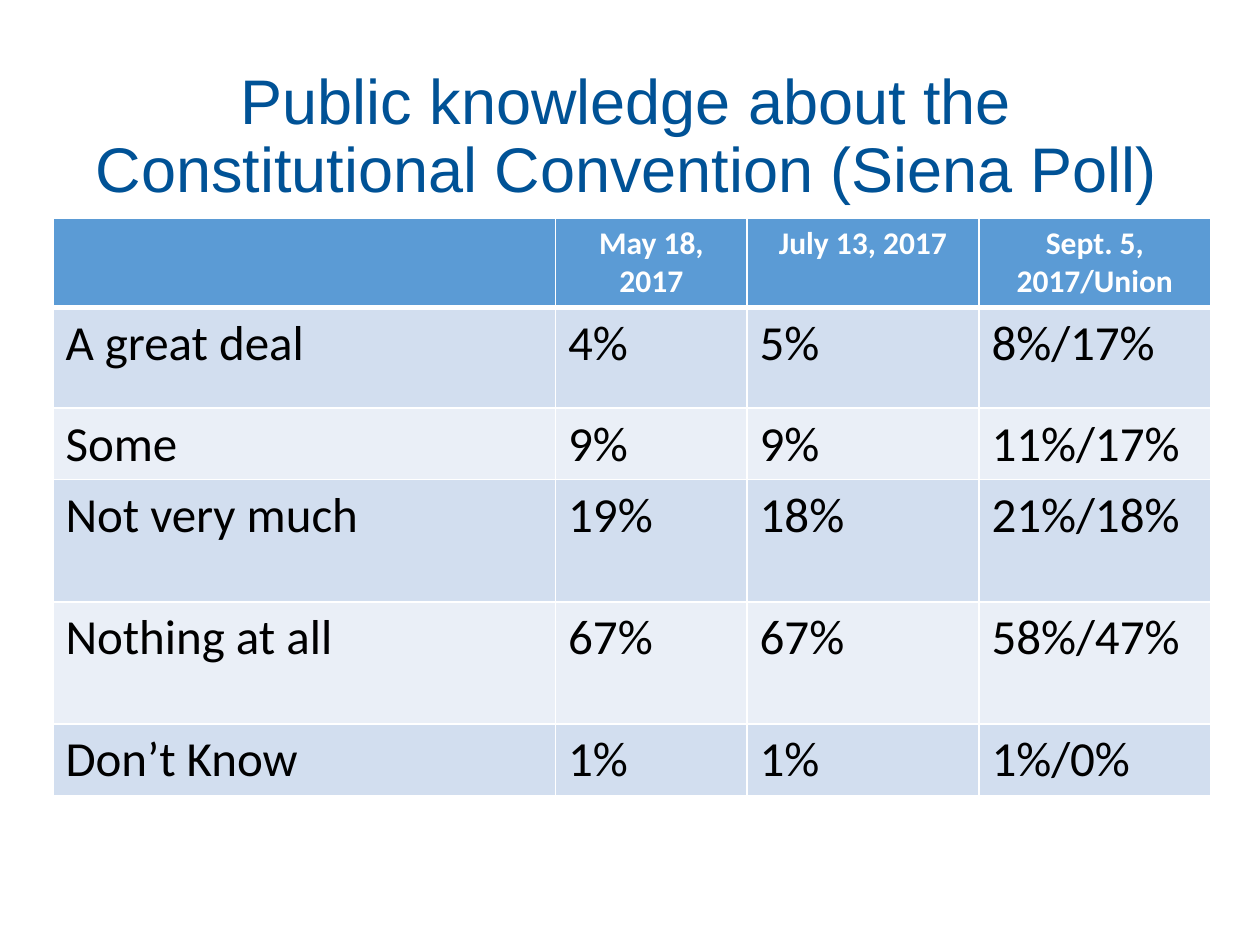
from lxml import etree
from pptx import Presentation
from pptx.dml.color import RGBColor
from pptx.enum import text
from pptx.oxml.ns import qn
from pptx.util import Inches, Pt

NAVY = RGBColor(0x00, 0x52, 0x96)
BLUE = RGBColor(0x5B, 0x9B, 0xD5)
BAND = RGBColor(0xD2, 0xDE, 0xEF)
PALE = RGBColor(0xEA, 0xEF, 0xF7)
WHITE = RGBColor(0xFF, 0xFF, 0xFF)
BLACK = RGBColor(0x00, 0x00, 0x00)

TITLE = "Public knowledge about the Constitutional Convention (Siena Poll)"
TITLE_FONT = {"name": "Arial", "size": Pt(36), "bold": False}
HEAD_FONT = {"name": "Calibri", "size": Pt(18), "bold": True}
BODY_FONT = {"name": "Calibri", "size": Pt(28), "bold": False}

POLL = [
    ["", "May 18, 2017", "July 13, 2017", "Sept. 5, 2017/Union"],
    ["A great deal", "4%", "5%", "8%/17%"],
    ["Some", "9%", "9%", "11%/17%"],
    ["Not very much", "19%", "18%", "21%/18%"],
    ["Nothing at all", "67%", "67%", "58%/47%"],
    ["Don’t Know", "1%", "1%", "1%/0%"],
]
COL_WIDTHS = [3.99, 1.52, 1.84, 1.84]
ROW_HEIGHTS = [0.71, 0.8, 0.53, 0.97, 0.97, 0.55]


def write(p, words, fmt, color, align):
    """Put one formatted run into a paragraph."""
    p.alignment = align
    font = p.add_run().font if words else p.font
    if words:
        p.runs[0].text = words
    for key, value in fmt.items():
        setattr(font, key, value)
    font.color.rgb = color


def add_title(s):
    """Add the centred slide title."""
    tf = s.shapes.add_textbox(Inches(0.66), Inches(0.37), Inches(8.62), Inches(1.45)).text_frame
    tf.word_wrap = True
    tf.margin_left = tf.margin_right = Inches(0.08)
    tf.vertical_anchor = text.MSO_ANCHOR.MIDDLE
    p = tf.paragraphs[0]
    p.line_spacing = 0.9
    write(p, TITLE, TITLE_FONT, NAVY, text.PP_ALIGN.CENTER)


def set_borders(cell, widths):
    """Draw white cell borders, given a width in points for each side."""
    tc_pr = cell._tc.get_or_add_tcPr()
    for side, width in widths.items():
        ln = etree.SubElement(tc_pr, qn(f"a:ln{side}"), w=str(Pt(width)))
        fill = etree.SubElement(ln, qn("a:solidFill"))
        etree.SubElement(fill, qn("a:srgbClr"), val=str(WHITE))


def style_cell(cell, words, row):
    """Fill, border and write one cell according to its row."""
    head = row == 0
    set_borders(cell, {"L": 1, "R": 1, "T": 3 if row == 1 else 1, "B": 3 if head else 1})
    cell.fill.solid()
    cell.fill.fore_color.rgb = BLUE if head else BAND if row % 2 else PALE
    align = text.PP_ALIGN.CENTER if head else text.PP_ALIGN.LEFT
    fmt, color = (HEAD_FONT, WHITE) if head else (BODY_FONT, BLACK)
    write(cell.text_frame.paragraphs[0], words, fmt, color, align)


def add_poll_table(s):
    """Add the table of poll results."""
    table = s.shapes.add_table(len(POLL), len(COL_WIDTHS), Inches(0.42), Inches(1.73),
                               Inches(sum(COL_WIDTHS)), Inches(sum(ROW_HEIGHTS))).table
    for col, width in zip(table.columns, COL_WIDTHS):
        col.width = Inches(width)
    for i, (row, height) in enumerate(zip(table.rows, ROW_HEIGHTS)):
        row.height = Inches(height)
        for cell, words in zip(row.cells, POLL[i]):
            style_cell(cell, words, i)


def main():
    """Build and save the slide."""
    prs = Presentation()
    prs.slide_width, prs.slide_height = Inches(10), Inches(7.5)
    s = prs.slides.add_slide(prs.slide_layouts[6])
    add_title(s)
    add_poll_table(s)
    prs.save("out.pptx")


if __name__ == "__main__":
    main()
